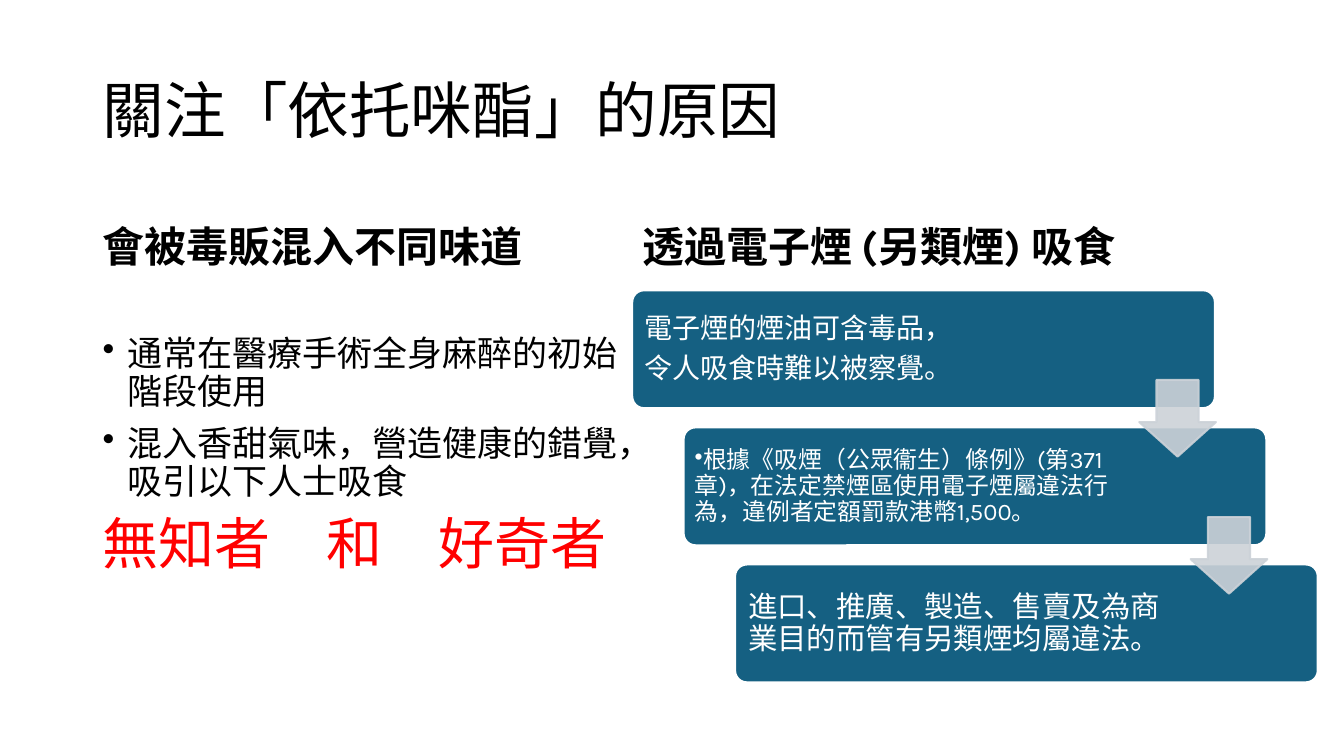
from lxml.etree import SubElement
from pptx import Presentation
from pptx.dml.color import RGBColor
from pptx.enum.shapes import MSO_SHAPE
from pptx.enum.text import MSO_ANCHOR, MSO_AUTO_SIZE, PP_ALIGN
from pptx.oxml.ns import qn
from pptx.util import Inches, Pt

FONT = "Karla"
BLACK, WHITE, RED = "000000", "FFFFFF", "FF0000"
CARD_BLUE, ARROW_GREY = "156082", "CCD2D8"


def colour(value):
    return RGBColor.from_string(value)


def add_bullet(para, hanging):
    properties = para._p.get_or_add_pPr()
    properties.set("marL", str(Inches(hanging)))
    properties.set("indent", str(-Inches(hanging)))
    SubElement(properties, qn("a:buChar")).set("char", "•")


def write_paragraph(frame, text, size, ink=BLACK, bold=False, before=0, after=0,
                    bullet=False, hanging=0):
    """Fill the frame's empty first paragraph, or add one after the text."""
    para = frame.add_paragraph() if frame.text else frame.paragraphs[0]
    para.alignment = PP_ALIGN.LEFT
    para.line_spacing = 0.9
    para.space_before, para.space_after = Pt(before), Pt(after)
    if bullet:
        add_bullet(para, hanging)
    span = para.add_run()
    span.text = text
    span.font.name = FONT
    span.font.size = Pt(size)
    span.font.bold = bold
    span.font.color.rgb = colour(ink)


def prepare_frame(shape, anchor):
    frame = shape.text_frame
    frame.word_wrap = True
    frame.auto_size = MSO_AUTO_SIZE.NONE
    frame.vertical_anchor = anchor
    return frame


def add_text_area(page, left, top, width, height, anchor=MSO_ANCHOR.TOP, inset=None):
    box = page.shapes.add_textbox(Inches(left), Inches(top), Inches(width), Inches(height))
    frame = prepare_frame(box, anchor)
    if inset is not None:
        frame.margin_left = frame.margin_right = Inches(inset)
        frame.margin_top = frame.margin_bottom = Inches(inset)
    return frame


def add_filled_shape(page, kind, left, top, width, height, fill, line, adjustments):
    shape = page.shapes.add_shape(kind, Inches(left), Inches(top), Inches(width), Inches(height))
    shape.shadow.inherit = False
    shape.fill.solid()
    shape.fill.fore_color.rgb = colour(fill)
    shape.line.color.rgb = colour(line)
    shape.line.width = Pt(1.5)
    for index, value in enumerate(adjustments):
        shape.adjustments[index] = value
    return shape


def add_title(page, text, left, top, width, height):
    title = page.shapes.title
    title.left, title.top = Inches(left), Inches(top)
    title.width, title.height = Inches(width), Inches(height)
    write_paragraph(prepare_frame(title, MSO_ANCHOR.MIDDLE), text, 44)


def add_heading(page, text, left, top, width, height):
    frame = add_text_area(page, left, top, width, height, MSO_ANCHOR.BOTTOM)
    write_paragraph(frame, text, 30, bold=True, before=10)


def add_flavour_points(page, points, targets, left, top, width, height):
    frame = add_text_area(page, left, top, width, height)
    for point in points:
        write_paragraph(frame, point, 25, before=10, bullet=True, hanging=0.25)
    write_paragraph(frame, targets, 40, ink=RED, before=10)


def add_card(page, lines, size, inset, text_width, bullet, left, top, width, height):
    add_filled_shape(page, MSO_SHAPE.ROUNDED_RECTANGLE, left, top, width, height,
                     CARD_BLUE, WHITE, [0.1])
    frame = add_text_area(page, left + 0.04, top + 0.04, text_width, height - 0.07,
                          MSO_ANCHOR.MIDDLE, inset)
    for line in lines:
        write_paragraph(frame, line, size, ink=WHITE, after=0.35 * size, bullet=bullet)


def add_arrow(page, left, top, side):
    arrow = add_filled_shape(page, MSO_SHAPE.DOWN_ARROW, left, top, side, side,
                             ARROW_GREY, ARROW_GREY, [0.55, 0.45])
    for tint in arrow._element.spPr.iter(qn("a:srgbClr")):
        SubElement(tint, qn("a:alpha")).set("val", "90000")


def add_staircase(page, cards, left, top, width, height):
    """Place cards stepping down to the right, with an arrow between neighbours."""
    step_right, step_down = 0.51, 1.36
    card_width = width - step_right * (len(cards) - 1)
    card_height = height - step_down * (len(cards) - 1)
    corners = [(left + step_right * index, top + step_down * index)
               for index in range(len(cards))]
    for card, (card_left, card_top) in zip(cards, corners):
        add_card(page, *card, card_left, card_top, card_width, card_height)
    for card_left, card_top in corners[:-1]:
        add_arrow(page, card_left + card_width - 0.75, card_top + 0.89, 0.76)


def main():
    deck = Presentation()
    deck.slide_width, deck.slide_height = Inches(13.33), Inches(7.5)
    page = deck.slides.add_slide(deck.slide_layouts[5])

    add_title(page, "關注「依托咪酯」的原因", 0.92, 0.4, 11.5, 1.45)
    add_heading(page, "會被毒販混入不同味道", 0.92, 1.84, 5.64, 0.9)
    add_flavour_points(
        page,
        ["通常在醫療手術全身麻醉的初始階段使用",
         "混入香甜氣味，營造健康的錯覺，吸引以下人士吸食"],
        "無知者　和　好奇者", 0.92, 3.29, 5.35, 3.48)
    add_heading(page, "透過電子煙 (另類煙) 吸食", 6.27, 1.84, 6.15, 0.9)

    # Lines, text size, inset, text width, bullet
    cards = [
        (["電子煙的煙油可含毒品，", "令人吸食時難以被察覺。"], 20, 0.08, 4.52, False),
        (["根據《吸煙（公眾衞生）條例》(第371章)，在法定禁煙區使用電子煙屬違法行為，"
          "違例者定額罰款港幣1,500。"], 17, 0.07, 4.44, True),
        (["進口、推廣、製造、售賣及為商業目的而管有另類煙均屬違法。"], 21, 0.09, 4.44, False),
    ]
    add_staircase(page, cards, 6.27, 2.88, 6.8, 3.89)
    deck.save("out.pptx")


if __name__ == "__main__":
    main()
